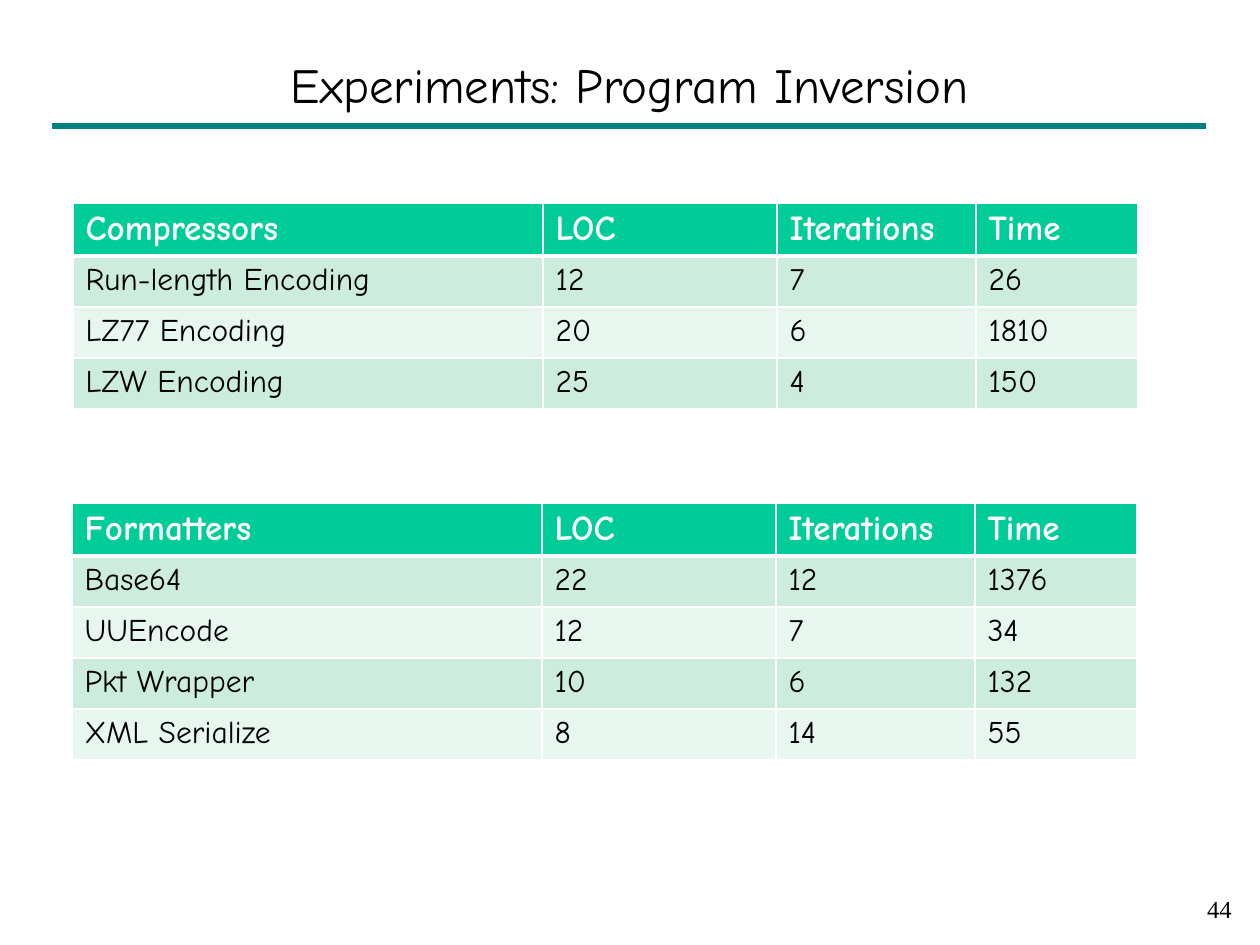
from dataclasses import dataclass

from lxml.etree import SubElement
from pptx import Presentation
from pptx.dml.color import RGBColor as RGB
from pptx.enum.shapes import MSO_CONNECTOR as CONN
from pptx.enum.text import MSO_ANCHOR as ANCHOR, PP_ALIGN as ALIGN
from pptx.oxml import parse_xml
from pptx.oxml.ns import nsdecls, qn
from pptx.util import Emu, Pt


@dataclass(frozen=True)
class Theme:
    font: str = "Comic Neue"
    number_font: str = "Times New Roman"
    black: str = "000000"
    white: str = "FFFFFF"
    rule: str = "008080"
    header: str = "00CC99"
    bands: tuple = ("CCECDE", "E7F6EF")
    title_size: int = 28
    header_size: int = 20
    body_size: int = 18
    number_size: int = 14


theme = Theme()


def px(n):
    return Emu(round(n * 914400 / 126))


def style(p, size, color, name=theme.font, bold=False):
    f = p.font
    f.name, f.size, f.bold = name, Pt(size), bold
    f.color.rgb = RGB.from_string(color)


prs = Presentation()
prs.slide_width, prs.slide_height = px(1260), px(945)
s = prs.slides.add_slide(prs.slide_layouts[5])

# Rule under the title
rule = s.shapes.add_connector(CONN.STRAIGHT, px(52), px(126), px(1206), px(126))
rule.line.color.rgb = RGB.from_string(theme.rule)
rule.line.width = Pt(4)
SubElement(rule._element.spPr, qn("a:effectLst"))

# Title
title = s.shapes.title
title.left, title.top, title.width, title.height = px(94), px(42), px(1071), px(84)
tf = title.text_frame
tf.text = "Experiments: Program Inversion"
tf.vertical_anchor = ANCHOR.MIDDLE
tf.paragraphs[0].alignment = ALIGN.CENTER
style(tf.paragraphs[0], theme.title_size, theme.black)

# Result tables: left, top, header height, rows
COLS = (470, 234, 199, 162)
ROW_H = 51
HEADINGS = ("LOC", "Iterations", "Time")
TABLES = (
    (73, 203, 52, (
        ("Compressors", *HEADINGS),
        ("Run-length Encoding", 12, 7, 26),
        ("LZ77 Encoding", 20, 6, 1810),
        ("LZW Encoding", 25, 4, 150),
    )),
    (72, 503, 53, (
        ("Formatters", *HEADINGS),
        ("Base64", 22, 12, 1376),
        ("UUEncode", 12, 7, 34),
        ("Pkt Wrapper", 10, 6, 132),
        ("XML Serialize", 8, 14, 55),
    )),
)
for left, top, header_h, rows in TABLES:
    height = header_h + ROW_H * (len(rows) - 1)
    table = s.shapes.add_table(len(rows), len(COLS), px(left), px(top),
                               px(sum(COLS)), px(height)).table
    for column, width in zip(table.columns, COLS):
        column.width = px(width)
    for i, row in enumerate(rows):
        is_header = i == 0
        table.rows[i].height = px(header_h if is_header else ROW_H)
        for j, value in enumerate(row):
            cell = table.cell(i, j)
            cell.text = str(value)
            p = cell.text_frame.paragraphs[0]
            if is_header:
                style(p, theme.header_size, theme.white, bold=True)
            else:
                style(p, theme.body_size, theme.black)
            cell.fill.solid()
            cell.fill.fore_color.rgb = RGB.from_string(
                theme.header if is_header else theme.bands[(i - 1) % 2])
            # White borders, thicker between header and body
            widths = {"L": 1, "R": 1, "T": 3 if i == 1 else 1, "B": 3 if is_header else 1}
            for k, (side, width) in enumerate(widths.items()):
                cell._tc.get_or_add_tcPr().insert(k, parse_xml(
                    f'<a:ln{side} {nsdecls("a")} w="{Pt(width)}"><a:solidFill>'
                    f'<a:srgbClr val="{theme.white}"/></a:solidFill></a:ln{side}>'))

# Slide number
number = s.shapes.add_textbox(px(982), px(888), px(262), px(53))
tf = number.text_frame
tf.word_wrap = True
tf.text = "44"
tf.paragraphs[0].alignment = ALIGN.RIGHT
style(tf.paragraphs[0], theme.number_size, theme.black, theme.number_font)

prs.save("out.pptx")
